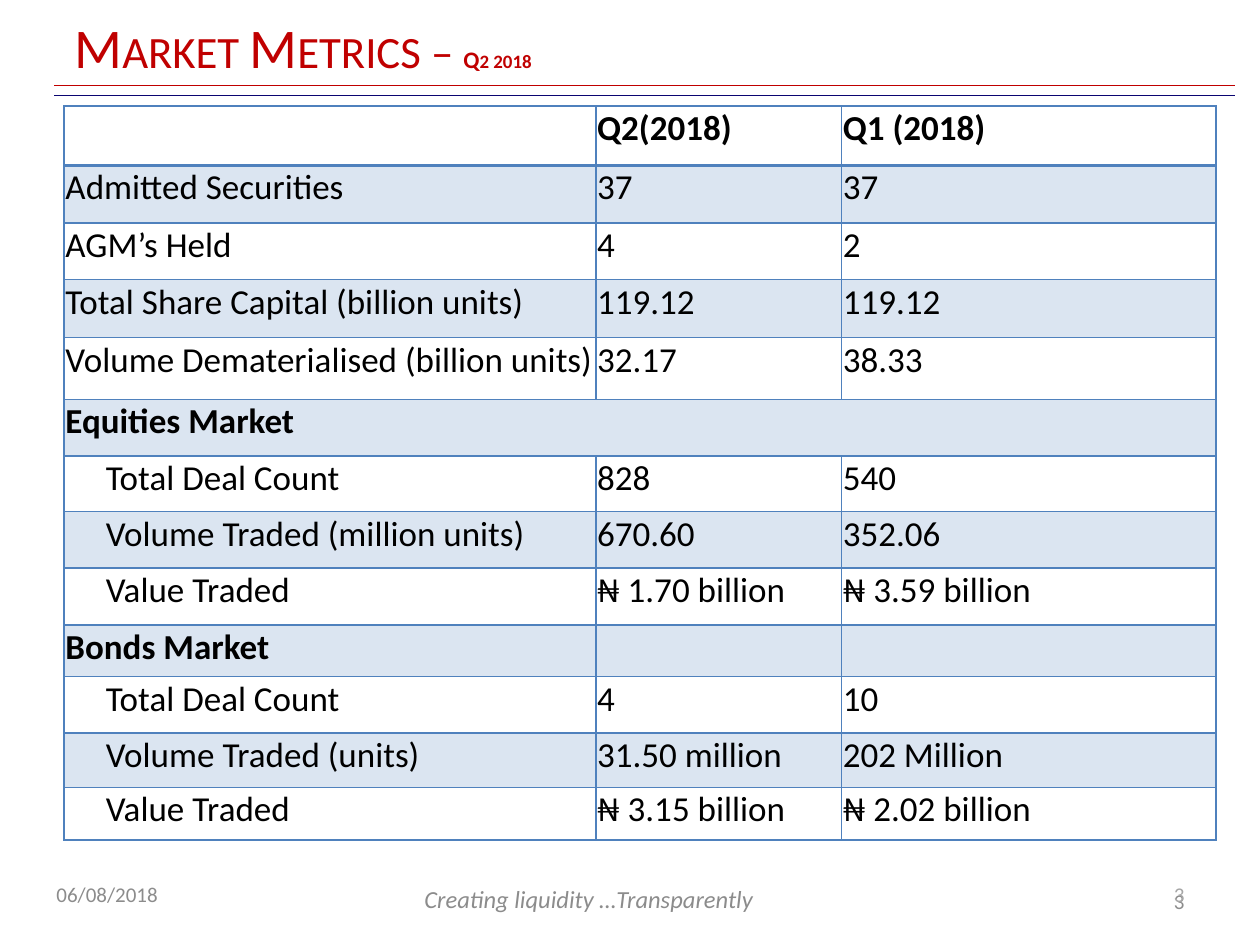
from dataclasses import dataclass

from lxml.etree import SubElement
from pptx import Presentation
from pptx.dml.color import RGBColor
from pptx.enum.shapes import MSO_CONNECTOR
from pptx.enum.text import MSO_ANCHOR, MSO_AUTO_SIZE, PP_ALIGN
from pptx.oxml.ns import qn
from pptx.util import Inches, Pt


@dataclass(frozen=True)
class Theme:
    font: str = "Calibri"
    red: str = "C00000"
    navy: str = "0A0571"
    blue: str = "4F81BD"
    black: str = "000000"
    grey: str = "8C8C8C"
    light_grey: str = "A6A6A6"
    title: float = 32
    period: float = 13.5
    table: float = 20
    motto: float = 14
    footer: float = 12


@dataclass(frozen=True)
class Row:
    height: float
    label: str = ""
    q2: str = ""
    q1: str = ""
    bold: bool = False
    indent: bool = False
    merged: bool = False


@dataclass(frozen=True)
class Footer:
    text: str
    left: float
    top: float
    width: float
    size: float
    color: str
    italic: bool = False
    align: PP_ALIGN = PP_ALIGN.LEFT
    anchor: MSO_ANCHOR = MSO_ANCHOR.MIDDLE


T = Theme()
COLUMNS = (4.22, 1.95, 2.97)
ROWS = (
    Row(0.47, "", "Q2(2018)", "Q1 (2018)", bold=True),
    Row(0.46, "Admitted Securities", "37", "37"),
    Row(0.45, "AGM’s Held", "4", "2"),
    Row(0.46, "Total Share Capital (billion units)", "119.12", "119.12"),
    Row(0.49, "Volume Dematerialised (billion units)", "32.17", "38.33"),
    Row(0.45, "Equities Market", bold=True, merged=True),
    Row(0.44, "Total Deal Count", "828", "540", indent=True),
    Row(0.45, "Volume Traded (million units)", "670.60", "352.06", indent=True),
    Row(0.45, "Value Traded", "₦ 1.70 billion", "₦ 3.59 billion", indent=True),
    Row(0.41, "Bonds Market", bold=True),
    Row(0.45, "Total Deal Count", "4", "10", indent=True),
    Row(0.43, "Volume Traded (units)", "31.50 million", "202 Million", indent=True),
    Row(0.42, "Value Traded", "₦ 3.15 billion", "₦ 2.02 billion", indent=True),
)
FOOTERS = (
    Footer("Creating liquidity …Transparently", 3.27, 6.97, 3.17, T.motto, T.grey,
           italic=True, anchor=MSO_ANCHOR.TOP),
    Footer("06/08/2018", 0.35, 6.9, 2.33, T.footer, T.grey),
    Footer("3", 7.17, 6.95, 2.33, T.footer, T.grey, align=PP_ALIGN.RIGHT),
    Footer("3", 7.17, 6.95, 2.33, T.footer, T.light_grey, align=PP_ALIGN.RIGHT,
           anchor=MSO_ANCHOR.TOP),
)


def set_font(font, size: float, color: str, bold: bool = False, italic: bool = False) -> None:
    font.name, font.size = T.font, Pt(size)
    font.bold, font.italic = bold, italic
    font.color.rgb = RGBColor.from_string(color)


def add_rule(slide, y: float, color: str) -> None:
    line = slide.shapes.add_connector(
        MSO_CONNECTOR.STRAIGHT, Inches(0.43), Inches(y), Inches(9.8), Inches(y))
    line.line.width = Pt(0.75)
    line.line.color.rgb = RGBColor.from_string(color)
    SubElement(line._element.spPr, qn("a:effectLst"))


def add_title(slide) -> None:
    sp = slide.shapes.title
    sp.left, sp.top, sp.width, sp.height = map(Inches, (0.49, 0.06, 7.96, 0.61))
    tf = sp.text_frame
    tf.auto_size = MSO_AUTO_SIZE.NONE
    tf.vertical_anchor = MSO_ANCHOR.MIDDLE
    p = tf.paragraphs[0]
    p.alignment = PP_ALIGN.LEFT
    for text, size, bold in (("Market Metrics – ", T.title, False), ("Q2 2018", T.period, True)):
        r = p.add_run()
        r.text = text
        set_font(r.font, size, T.red, bold)
        r.font._element.set("cap", "small")


def add_footer(slide, item: Footer) -> None:
    sp = slide.shapes.add_textbox(
        Inches(item.left), Inches(item.top), Inches(item.width), Inches(0.4))
    tf = sp.text_frame
    tf.word_wrap = True
    tf.vertical_anchor = item.anchor
    p = tf.paragraphs[0]
    p.text = item.text
    p.alignment = item.align
    set_font(p.font, item.size, item.color, italic=item.italic)


def set_borders(cell, top: float, bottom: float) -> None:
    tc_pr = cell._tc.get_or_add_tcPr()
    for side, width in (("L", 1), ("R", 1), ("T", top), ("B", bottom)):
        ln = SubElement(tc_pr, qn(f"a:ln{side}"), w=str(Pt(width)))
        fill = SubElement(ln, qn("a:solidFill"))
        SubElement(fill, qn("a:srgbClr"), val=T.blue)


def set_fill(cell, shaded: bool) -> None:
    if not shaded:
        cell.fill.background()
        return
    cell.fill.solid()
    cell.fill.fore_color.rgb = RGBColor.from_string(T.blue)
    color = cell._tc.tcPr.find(f"{qn('a:solidFill')}/{qn('a:srgbClr')}")
    SubElement(color, qn("a:alpha"), val="20000")


def add_metrics(slide) -> None:
    frame = slide.shapes.add_table(
        len(ROWS), len(COLUMNS), Inches(0.51), Inches(0.84),
        Inches(sum(COLUMNS)), Inches(sum(row.height for row in ROWS)))
    table = frame.table
    table.first_row = table.horz_banding = False
    for column, width in zip(table.columns, COLUMNS):
        column.width = Inches(width)
    for i, row in enumerate(ROWS):
        table.rows[i].height = Inches(row.height)
        for j, text in enumerate((row.label, row.q2, row.q1)):
            cell = table.cell(i, j)
            indent = 0.32 if row.indent and j == 0 else 0
            cell.margin_left = Inches(0.01 + indent)
            cell.margin_top = cell.margin_right = Inches(0.01)
            cell.margin_bottom = 0
            # The rule under the header is twice as thick
            set_borders(cell, 2 if i == 1 else 1, 2 if i == 0 else 1)
            set_fill(cell, i % 2 == 1)
            p = cell.text_frame.paragraphs[0]
            p.text = text
            set_font(p.font, T.table, T.black, row.bold)
        if row.merged:
            table.cell(i, 0).merge(table.cell(i, len(COLUMNS) - 1))


def main() -> None:
    prs = Presentation()
    prs.slide_width, prs.slide_height = Inches(10), Inches(7.5)
    slide = prs.slides.add_slide(prs.slide_layouts[5])  # title only

    # Heading and double rule
    add_title(slide)
    add_rule(slide, 0.76, T.navy)
    add_rule(slide, 0.68, T.red)

    # Quarterly figures
    add_metrics(slide)

    # Motto, date and page numbers
    for item in FOOTERS:
        add_footer(slide, item)

    prs.save("out.pptx")


if __name__ == "__main__":
    main()
